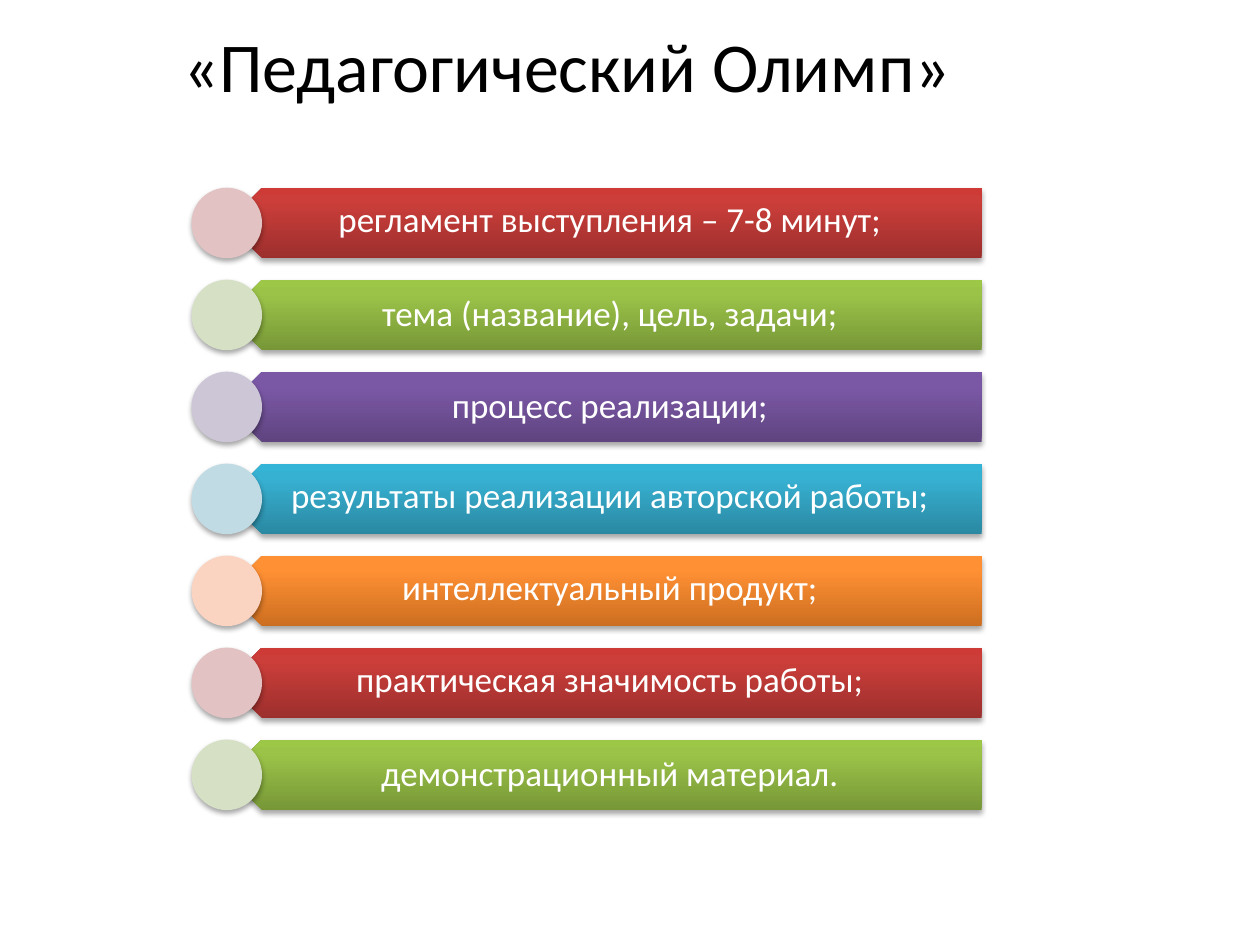
"""Build the «Педагогический Олимп» slide: a title over seven coloured banners."""
import pptx
import pptx.dml.color
import pptx.enum.shapes
import pptx.enum.text
import pptx.oxml
import pptx.oxml.ns
import pptx.util

INCH = pptx.util.Inches
SHAPE = pptx.enum.shapes.MSO_SHAPE
ANCHOR = pptx.enum.text.MSO_ANCHOR

TITLE = "«Педагогический Олимп»"
TOP, MIDDLE = (ANCHOR.TOP, 1.0), (ANCHOR.MIDDLE, 0.9)
REQUIREMENTS = [
    ("регламент выступления – 7-8 минут;", TOP),
    ("тема (название), цель, задачи;", MIDDLE),
    ("процесс реализации;", MIDDLE),
    ("результаты реализации авторской работы;", TOP),
    ("интеллектуальный продукт;", TOP),
    ("практическая значимость работы;", TOP),
    ("демонстрационный материал.", MIDDLE),
]
PALETTE = [
    (("9C2F2D", "CB3E3A", "CE3B37"), "E2C2C2"),
    (("779737", "9BC348", "9DC746"), "D5E0C4"),
    (("5F4480", "7B58A6", "7C57A8"), "CDC6D7"),
    (("2A88A2", "37B1D2", "34B4D6"), "C1DBE5"),
    (("CC6E20", "FF9034", "FF9136"), "FBD3C1"),
]
STOPS = (0, 80, 100)
FIRST_ROW, ROW_PITCH, ROW_HEIGHT = 1.49, 0.73, 0.56
BANNER_LEFT, BANNER_WIDTH = 1.8, 5.99
BANNER_INSETS = {"margin_left": 0.25, "margin_top": 0.08,
                 "margin_right": 0.16, "margin_bottom": 0.08}


def rgb(code):
    """Turn a hex string into a colour."""
    return pptx.dml.color.RGBColor.from_string(code)


def drawing(markup):
    """Parse DrawingML whose root element has the given markup."""
    root, rest = markup.split(" ", 1)
    return pptx.oxml.parse_xml(f"<{root} {pptx.oxml.ns.nsdecls('a')} {rest}")


def add_words(slide, words, box, size, color, placing=TOP, insets=None):
    """Add one centred line of text."""
    anchor, spacing = placing
    label = slide.shapes.add_textbox(*map(INCH, box))
    frame = label.text_frame
    frame.word_wrap = True
    frame.vertical_anchor = anchor
    for side, inset in (insets or {}).items():
        setattr(frame, side, INCH(inset))
    line = frame.paragraphs[0]
    line.text = words
    line.alignment = pptx.enum.text.PP_ALIGN.CENTER
    line.line_spacing = spacing
    font = line.runs[0].font
    for key, value in {"name": "Calibri", "size": pptx.util.Pt(size)}.items():
        setattr(font, key, value)
    font.color.rgb = rgb(color)


def add_raised(slide, kind, box):
    """Add a borderless shape with a soft shadow beneath it."""
    raised = slide.shapes.add_shape(kind, *map(INCH, box))
    raised.line.fill.background()
    raised.shadow.inherit = False
    effects = raised._element.spPr.find(pptx.oxml.ns.qn("a:effectLst"))
    effects.append(drawing(
        f'a:outerShdw blurRad="{pptx.util.Pt(3.1)}" dist="{pptx.util.Pt(1.8)}" '
        'dir="5400000" rotWithShape="0"><a:srgbClr val="000000">'
        '<a:alpha val="35000"/></a:srgbClr></a:outerShdw>'))
    return raised


def shade(banner, colors):
    """Fill a banner with a vertical gradient that ignores its rotation."""
    stops = "".join(f'<a:gs pos="{stop * 1000}"><a:srgbClr val="{color}"/></a:gs>'
                    for stop, color in zip(STOPS, colors))
    banner.fill.background()
    properties = banner._element.spPr
    properties.replace(properties.find(pptx.oxml.ns.qn("a:noFill")), drawing(
        f'a:gradFill rotWithShape="0"><a:gsLst>{stops}</a:gsLst>'
        '<a:lin ang="16200000" scaled="0"/></a:gradFill>'))


def main():
    """Compose and save the slide."""
    deck = pptx.Presentation()
    deck.slide_width, deck.slide_height = INCH(10), INCH(7.5)
    slide = deck.slides.add_slide(deck.slide_layouts[6])
    add_words(slide, TITLE, (0, 0, 9, 1.02), 40, "000000", (ANCHOR.MIDDLE, 1.0))
    for row, (words, placing) in enumerate(REQUIREMENTS):
        colors, tint = PALETTE[row % len(PALETTE)]
        top = FIRST_ROW + row * ROW_PITCH
        box = (BANNER_LEFT, top, BANNER_WIDTH, ROW_HEIGHT)
        banner = add_raised(slide, SHAPE.PENTAGON, box)
        banner.rotation = 180
        shade(banner, colors)
        add_words(slide, words, box, 20, "FFFFFF", placing, BANNER_INSETS)
        bead = add_raised(slide, SHAPE.OVAL, (BANNER_LEFT - ROW_HEIGHT / 2, top,
                                              ROW_HEIGHT, ROW_HEIGHT))
        bead.fill.solid()
        bead.fill.fore_color.rgb = rgb(tint)
    deck.save("out.pptx")


if __name__ == "__main__":
    main()
